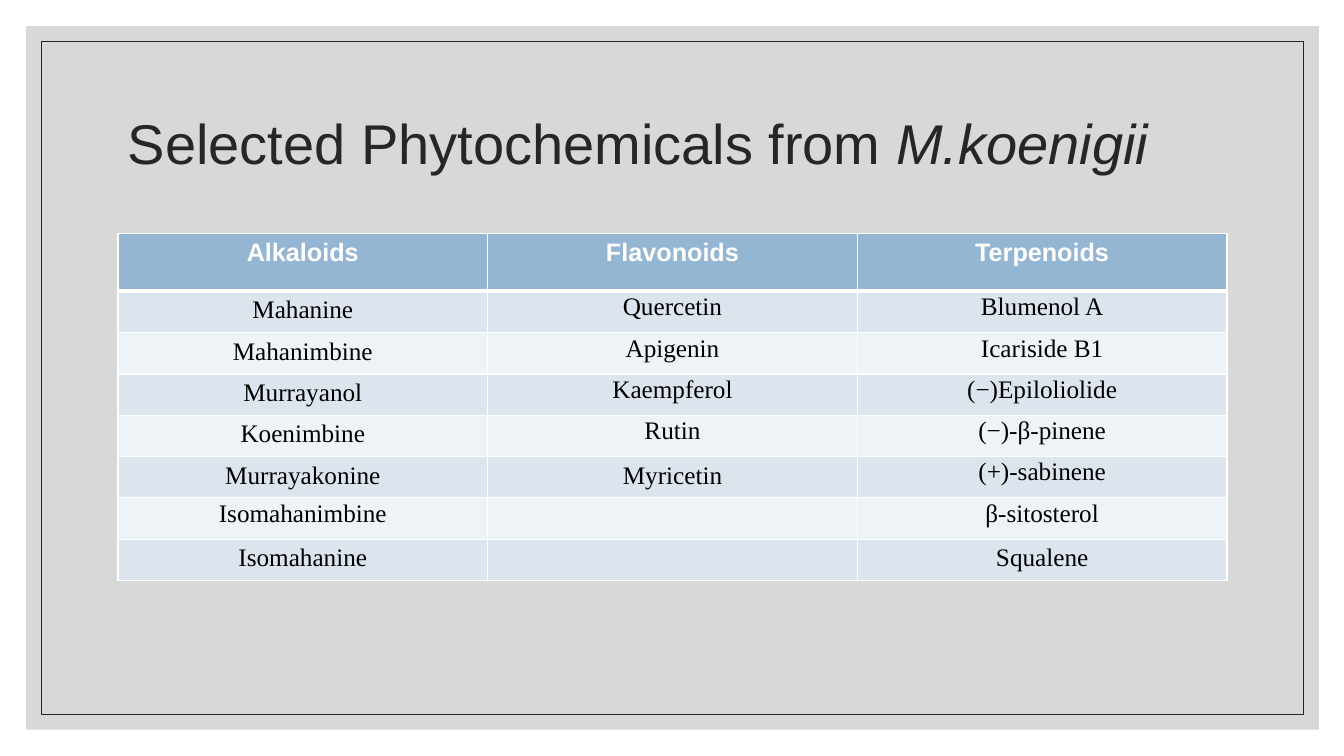
from lxml import etree
from pptx import Presentation, util as u
from pptx.dml.color import RGBColor
from pptx.enum import shapes, text
from pptx.oxml.ns import qn

COLORS = {
    "panel": "BFBFBF", "ink": "262626", "header": "94B6D2", "white": "FFFFFF",
    "black": "000000", "odd": "DCE5EE", "even": "EEF3F7",
}
HEADINGS = ["Alkaloids", "Flavonoids", "Terpenoids"]
COMPOUNDS = [
    ["Mahanine", "Quercetin", "Blumenol A"],
    ["Mahanimbine", "Apigenin", "Icariside B1"],
    ["Murrayanol", "Kaempferol", "(−)Epiloliolide"],
    ["Koenimbine", "Rutin", "(−)-β-pinene"],
    ["Murrayakonine", "Myricetin", "(+)-sabinene"],
    ["Isomahanimbine", "", "β-sitosterol"],
    ["Isomahanine", "", "Squalene"],
]
SPACED = {"Quercetin", "Apigenin", "Kaempferol", "Rutin", "Isomahanimbine",
          "Blumenol A", "Icariside B1", "(−)Epiloliolide", "(−)-β-pinene",
          "(+)-sabinene", "β-sitosterol"}


class SlideBuilder:
    def __init__(self, slide):
        self.slide = slide
        self.heading_font = "Arial"
        self.body_font = "Times New Roman"

    def color(self, name):
        return RGBColor.from_string(COLORS[name])

    def rectangle(self, box, fill=None, opacity=100, line=None):
        frame = self.slide.shapes.add_shape(
            shapes.MSO_SHAPE.RECTANGLE, *map(u.Inches, box))
        frame.shadow.inherit = False
        if fill:
            frame.fill.solid()
            frame.fill.fore_color.rgb = self.color(fill)
            tint = frame.fill._xPr.find(qn("a:solidFill"))[0]
            etree.SubElement(tint, qn("a:alpha"), val=str(opacity * 1000))
        else:
            frame.fill.background()
        if line:
            frame.line.color.rgb = self.color(line)
            frame.line.width = u.Pt(0.5)
        else:
            frame.line.fill.background()

    def run(self, paragraph, words, size, font, color, bold=False, italic=False):
        run = paragraph.add_run()
        run.text = words
        run.font.size = u.Pt(size)
        run.font.name = font
        run.font.color.rgb = self.color(color)
        run.font.bold = bold
        run.font.italic = italic

    def title(self, box, parts):
        frame = self.slide.shapes.add_textbox(*map(u.Inches, box)).text_frame
        frame.word_wrap = True
        frame.vertical_anchor = text.MSO_ANCHOR.MIDDLE
        heading = frame.paragraphs[0]
        heading.line_spacing = 0.9
        for words, italic in parts:
            self.run(heading, words, 40, self.heading_font, "ink", italic=italic)

    def borders(self, cell, top, bottom):
        properties = cell._tc.get_or_add_tcPr()
        for side, points in zip("LRTB", (1, 1, top, bottom)):
            edge = etree.SubElement(
                properties, qn(f"a:ln{side}"), w=str(u.Pt(points)))
            solid = etree.SubElement(edge, qn("a:solidFill"))
            etree.SubElement(solid, qn("a:srgbClr"), val=COLORS["white"])

    def cell(self, cell, words, row):
        header = row == 0
        self.borders(cell, 3 if row == 1 else 1, 3 if header else 1)
        cell.fill.solid()
        cell.fill.fore_color.rgb = self.color(
            "header" if header else "odd" if row % 2 else "even")
        paragraph = cell.text_frame.paragraphs[0]
        paragraph.alignment = text.PP_ALIGN.CENTER
        if words in SPACED:
            cell.margin_left = cell.margin_right = u.Inches(0.07)
            cell.margin_top = cell.margin_bottom = 0
            paragraph.line_spacing = 1.07
            paragraph.space_after = u.Pt(8)
        if words:
            self.run(paragraph, words, 18,
                     self.heading_font if header else self.body_font,
                     "white" if header else "black", bold=header)

    def table(self, box, rows, header_height, row_height):
        grid = self.slide.shapes.add_table(
            len(rows), len(rows[0]), *map(u.Inches, box)).table
        for r, words in enumerate(rows):
            grid.rows[r].height = u.Inches(row_height if r else header_height)
            for c, word in enumerate(words):
                self.cell(grid.cell(r, c), word, r)


def main():
    deck = Presentation()
    deck.slide_width, deck.slide_height = u.Inches(13.33), u.Inches(7.5)
    builder = SlideBuilder(deck.slides.add_slide(deck.slide_layouts[6]))
    builder.rectangle((0.26, 0.26, 12.82, 6.98), fill="panel", opacity=60)
    builder.rectangle((0.41, 0.41, 12.52, 6.68), line="ink")
    builder.title((1.17, 0.7, 11, 1.5), [
        ("Selected Phytochemicals from ", False), ("M.koenigii", True)])
    builder.table((1.17, 2.32, 11, 3.41), [HEADINGS] + COMPOUNDS, 0.57, 0.41)
    deck.save("out.pptx")


if __name__ == "__main__":
    main()
